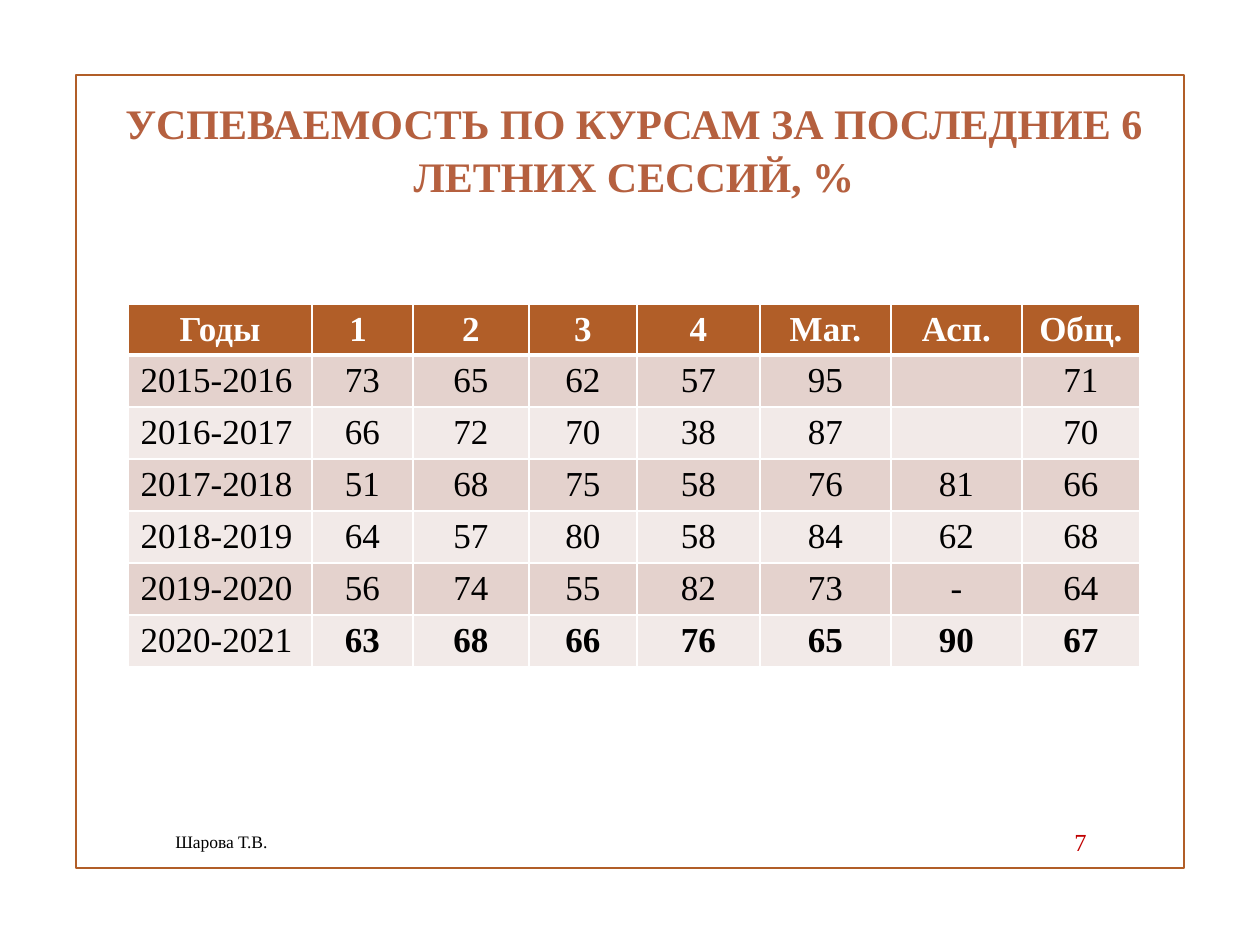
import dataclasses

import pptx
import pptx.dml.color
import pptx.enum.shapes
import pptx.enum.text
import pptx.oxml.ns
import pptx.util
from lxml import etree

SCALE = 914400 / 126
FONT = "Times New Roman"
HUES = {
    "brown": "B15E28", "title": "B5603F", "odd": "E4D2CD", "even": "F2EAE8",
    "white": "FFFFFF", "black": "000000", "red": "C00000",
}
ALIGN = pptx.enum.text.PP_ALIGN
MIDDLE = pptx.enum.text.MSO_ANCHOR.MIDDLE

HEAD = ["Годы", "1 ", "2", "3", "4", "Маг.", "Асп.", "Общ."]
RATES = [
    ["2015-2016", "73", "65", "62", "57", "95", "", "71"],
    ["2016-2017", "66", "72", "70", "38", "87", "", "70"],
    ["2017-2018", "51", "68", "75", "58", "76", "81", "66"],
    ["2018-2019", "64", "57", "80", "58", "84", "62", "68"],
    ["2019-2020", "56", "74", "55", "82", "73", "-", "64"],
    ["2020-2021", "63", "68", "66", "76", "65", "90", "67"],
]
WIDTHS = [184, 101, 116, 108, 123, 131, 131, 118]
HEIGHTS = [51] + [52] * len(RATES)


@dataclasses.dataclass
class Box:
    left: int
    top: int
    width: int
    height: int

    def emu(self) -> list[int]:
        return [px(n) for n in dataclasses.astuple(self)]


@dataclasses.dataclass
class Style:
    size: int
    hue: str
    align: ALIGN
    bold: bool = False


@dataclasses.dataclass
class Note:
    box: Box
    text: str
    style: Style


NOTES = [
    Note(Box(1045, 822, 54, 39), "7", Style(14, "red", ALIGN.RIGHT)),
    Note(Box(163, 822, 703, 39), "Шарова Т.В.", Style(10, "black", ALIGN.LEFT)),
]


def px(count: int) -> int:
    return round(count * SCALE)


def color(hue: str) -> pptx.dml.color.RGBColor:
    return pptx.dml.color.RGBColor.from_string(HUES[hue])


def write(frame, text: str, style: Style):
    frame.word_wrap = True
    para = frame.paragraphs[0]
    para.alignment = style.align
    run = para.add_run()
    run.text = text
    run.font.name = FONT
    run.font.size = pptx.util.Pt(style.size)
    run.font.bold = style.bold
    run.font.color.rgb = color(style.hue)
    return para


def edge(cell, side: str, points: int) -> None:
    """Add a white border; call before the cell is filled."""
    tag = pptx.oxml.ns.qn
    line = etree.SubElement(cell._tc.get_or_add_tcPr(), tag(f"a:{side}"),
                            w=str(pptx.util.Pt(points)))
    fill = etree.SubElement(line, tag("a:solidFill"))
    etree.SubElement(fill, tag("a:srgbClr"), val=HUES["white"])


def draw_frame(slide, box: Box) -> None:
    rect = slide.shapes.add_shape(
        pptx.enum.shapes.MSO_SHAPE.RECTANGLE, *box.emu())
    rect.shadow.inherit = False
    rect.fill.background()
    rect.line.color.rgb = color("brown")
    rect.line.width = pptx.util.Pt(1.25)


def draw_title(slide, box: Box, text: str) -> None:
    title = slide.shapes.title
    title.left, title.top, title.width, title.height = box.emu()
    frame = title.text_frame
    frame.vertical_anchor = MIDDLE
    para = write(frame, text, Style(24, "title", ALIGN.CENTER, True))
    para.line_spacing = 1.05


def draw_cell(cell, text: str, row: int, col: int) -> None:
    top, last = row == 0, row == len(RATES)
    for side in ("lnL", "lnR", "lnT", "lnB"):
        thick = (top and side == "lnB") or (row == 1 and side == "lnT")
        edge(cell, side, 3 if thick else 1)
    cell.fill.solid()
    cell.fill.fore_color.rgb = color(
        "brown" if top else "odd" if row % 2 else "even")
    cell.margin_top, cell.margin_bottom = px(6), px(5)
    align = ALIGN.LEFT if col == 0 and not top else ALIGN.CENTER
    bold = top or (last and col > 0)
    write(cell.text_frame, text,
          Style(20, "white" if top else "black", align, bold))


def draw_table(slide, left: int, top: int) -> None:
    rows = [HEAD] + RATES
    box = Box(left, top, sum(WIDTHS), sum(HEIGHTS))
    table = slide.shapes.add_table(len(rows), len(HEAD), *box.emu()).table
    for col, width in zip(table.columns, WIDTHS):
        col.width = px(width)
    for row, height in zip(table.rows, HEIGHTS):
        row.height = px(height)
    for r, texts in enumerate(rows):
        for c, text in enumerate(texts):
            draw_cell(table.cell(r, c), text, r, c)


def draw_note(slide, note: Note) -> None:
    frame = slide.shapes.add_textbox(*note.box.emu()).text_frame
    frame.vertical_anchor = MIDDLE
    write(frame, note.text, note.style)


def main() -> None:
    deck = pptx.Presentation()
    deck.slide_width, deck.slide_height = px(1260), px(945)
    slide = deck.slides.add_slide(deck.slide_layouts.get_by_name("Title Only"))
    draw_frame(slide, Box(76, 75, 1108, 793))
    draw_title(slide, Box(67, 69, 1134, 158),
               "УСПЕВАЕМОСТЬ ПО КУРСАМ ЗА ПОСЛЕДНИЕ 6 ЛЕТНИХ СЕССИЙ, %")
    draw_table(slide, 128, 304)
    for note in NOTES:
        draw_note(slide, note)
    deck.save("out.pptx")


if __name__ == "__main__":
    main()
